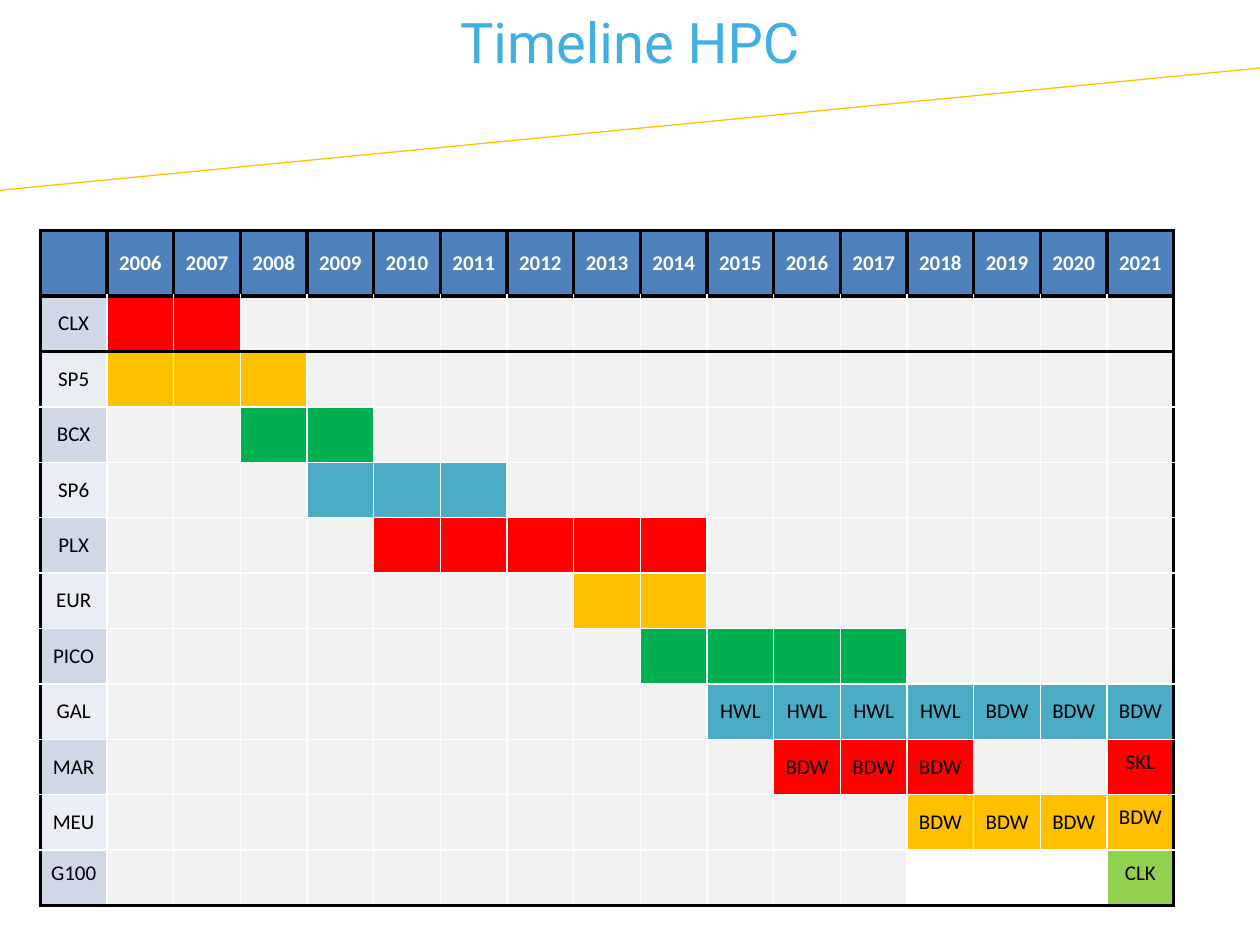
import pptx
import pptx.dml.color
import pptx.enum.shapes
import pptx.enum.text
import pptx.oxml
import pptx.oxml.ns
import pptx.util

Inches = pptx.util.Inches
COLORS = {
    "title": "40AFE3", "header": "4F81BD", "odd": "D0D8E8", "even": "E9EDF4",
    "idle": "F2F2F2", "red": "FF0000", "amber": "FFC000", "green": "00B050",
    "teal": "4BACC6", "lime": "92D050", "white": "FFFFFF", "black": "000000",
}
FIRST_YEAR, LAST_YEAR = 2006, 2021
SYSTEMS = [
    ("CLX", [(2006, 2007, "red", "")]),
    ("SP5", [(2006, 2008, "amber", "")]),
    ("BCX", [(2008, 2009, "green", "")]),
    ("SP6", [(2009, 2011, "teal", "")]),
    ("PLX", [(2010, 2014, "red", "")]),
    ("EUR", [(2013, 2014, "amber", "")]),
    ("PICO", [(2014, 2017, "green", "")]),
    ("GAL", [(2015, 2018, "teal", "HWL"), (2019, 2021, "teal", "BDW")]),
    ("MAR", [(2016, 2018, "red", "BDW"), (2021, 2021, "red", "SKL")]),
    ("MEU", [(2018, 2021, "amber", "BDW")]),
    ("G100", [(2018, 2020, "white", ""), (2021, 2021, "lime", "CLK")]),
]
TOP_ANCHORED = {("MAR", 2021), ("MEU", 2021), ("G100", 2021), ("G100", None)}
THICK, THIN = ("black", 2.25), ("white", 1)


class Painter:
    """Holds the style and the current page, and draws each kind of element."""

    def __init__(self, page, colors):
        self.page = page
        self.colors = colors

    def rgb(self, name):
        """Return the named colour."""
        return pptx.dml.color.RGBColor.from_string(self.colors[name])

    def add_text(self, para, text, color, formats):
        """Add one centred span of text to a paragraph."""
        para.alignment = pptx.enum.text.PP_ALIGN.CENTER
        span = para.add_run()
        span.text = text
        for name, value in formats.items():
            setattr(span.font, name, value)
        span.font.color.rgb = self.rgb(color)

    def title(self, text, left, top, width, height):
        """Draw the page title."""
        box = self.page.shapes.add_textbox(*map(Inches, (left, top, width, height)))
        box.text_frame.word_wrap = True
        self.add_text(box.text_frame.paragraphs[0], text, "title",
                      {"name": "Roboto", "size": pptx.util.Pt(32)})

    def line(self, start, end, color, width):
        """Draw a straight line without a shadow."""
        line = self.page.shapes.add_connector(
            pptx.enum.shapes.MSO_CONNECTOR.STRAIGHT, *map(Inches, start + end))
        line.line.color.rgb = self.rgb(color)
        line.line.width = pptx.util.Pt(width)
        line._element.spPr.append(pptx.oxml.parse_xml(
            f'<a:effectLst {pptx.oxml.ns.nsdecls("a")}/>'))

    def table(self, columns, left, top, width, heights):
        """Add a plain table with equal columns."""
        frame = self.page.shapes.add_table(
            len(heights), columns, *map(Inches, (left, top, width, sum(heights))))
        table = frame.table
        table.first_row = table.horz_banding = False
        for column in table.columns:
            column.width = Inches(width / columns)
        for row, height in zip(table.rows, heights):
            row.height = Inches(height)
        return table

    def cell(self, cell, fill, borders, text="", color="black", bold=False, middle=True):
        """Style a cell; borders run left, right, top, bottom."""
        properties = cell._tc.get_or_add_tcPr()
        for side, (line_color, width) in zip("LRTB", borders):
            properties.append(pptx.oxml.parse_xml(
                f'<a:ln{side} {pptx.oxml.ns.nsdecls("a")} w="{pptx.util.Pt(width)}">'
                f'<a:solidFill><a:srgbClr val="{self.colors[line_color]}"/></a:solidFill>'
                f'</a:ln{side}>'))
        cell.fill.solid()
        cell.fill.fore_color.rgb = self.rgb(fill)
        if not text:
            return
        anchor = pptx.enum.text.MSO_ANCHOR
        formats = {"vertical_anchor": anchor.MIDDLE if middle else anchor.TOP}
        for side in ("left", "right", "top", "bottom"):
            formats[f"margin_{side}"] = Inches(0.08)
        for name, value in formats.items():
            setattr(cell, name, value)
        self.add_text(cell.text_frame.paragraphs[0], text, color,
                      {"name": "Calibri", "size": pptx.util.Pt(12), "bold": bold})


def fill_timeline(painter):
    """Draw the year header and one row of coloured years for each system."""
    years = range(FIRST_YEAR, LAST_YEAR + 1)
    heights = [0.52] + [0.44] * len(SYSTEMS)
    table = painter.table(len(years) + 1, 0.32, 1.83, 9, heights)
    for column, text in enumerate(["", *map(str, years)]):
        painter.cell(table.cell(0, column), "header", [THICK] * 4, text, "white", True)

    for row, (system, periods) in enumerate(SYSTEMS, start=1):
        upper = THICK if row <= 2 else THIN
        lower = THICK if row in (1, len(SYSTEMS)) else THIN
        painter.cell(table.cell(row, 0), "odd" if row % 2 else "even",
                     [THICK, THIN, upper, lower], system,
                     middle=(system, None) not in TOP_ANCHORED)
        active = {year: (color, label) for first, last, color, label in periods
                  for year in range(first, last + 1)}
        for column, year in enumerate(years, start=1):
            fill, label = active.get(year, ("idle", ""))
            right = THICK if year == LAST_YEAR else THIN
            painter.cell(table.cell(row, column), fill, [THIN, right, upper, lower],
                         label, middle=(system, year) not in TOP_ANCHORED)


def main():
    """Build the timeline page and save the deck."""
    deck = pptx.Presentation()
    deck.slide_width, deck.slide_height = Inches(10), Inches(7.5)
    painter = Painter(deck.slides.add_slide(deck.slide_layouts[6]), COLORS)
    painter.line((0, 1.51), (10, 0.54), "amber", 0.75)
    painter.title("Timeline HPC", 0, 0.01, 10, 0.64)
    fill_timeline(painter)
    deck.save("out.pptx")


if __name__ == "__main__":
    main()
